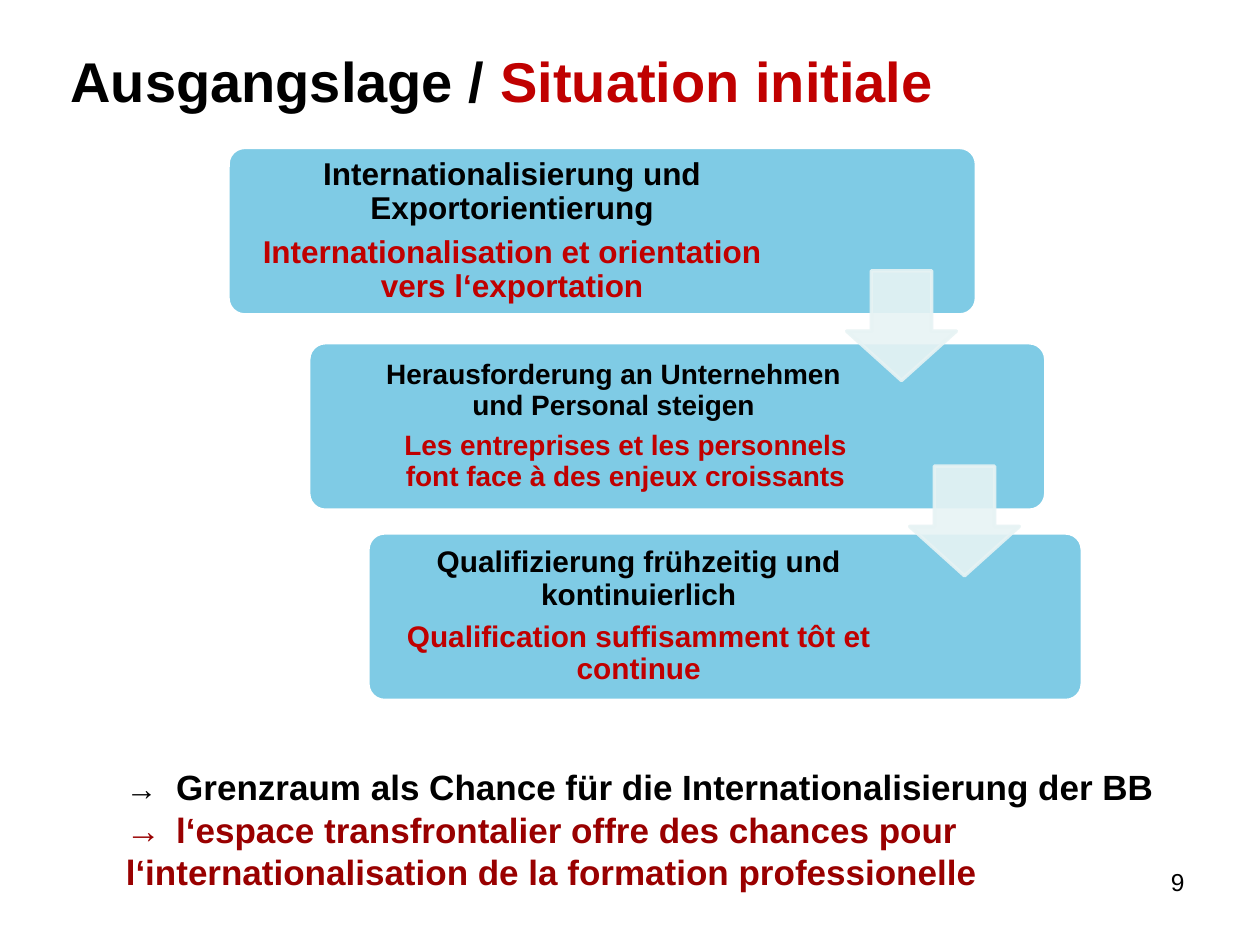
"""Build the slide on the initial situation, with three cascading steps."""
from lxml import etree
from pptx import Presentation
from pptx.dml.color import RGBColor
from pptx.enum import shapes, text
from pptx.oxml import ns
from pptx.util import Inches, Pt

COLORS = {"german": "000000", "french": "C00000", "conclusion": "990000",
          "box": "0099CC", "box_line": "FFFFFF", "arrow": "E7F3F4"}
BOX_H, TEXT_GAP, ARROW = 1.33, 0.04, 0.87
STEPS = [
    (1.81, 1.17, 5.94, 4.43, 18, (0, 0),
     "Internationalisierung und Exportorientierung",
     "Internationalisation et orientation vers l‘exportation"),
    (2.45, 2.72, 5.85, 4.36, 16, (0.4, 0.59),
     "Herausforderung an Unternehmen und Personal steigen",
     "Les entreprises et les personnels font face à des enjeux croissants"),
    (2.92, 4.23, 5.67, 4.22, 17, (0, 0),
     "Qualifizierung frühzeitig und kontinuierlich",
     "Qualification suffisamment tôt et continue"),
]
ARROWS = [(6.72, 2.15), (7.22, 3.7)]
CONCLUSIONS = [
    ("Grenzraum als Chance für die Internationalisierung der BB", "german", 18),
    ("l‘espace transfrontalier offre des chances pour "
     "l‘internationalisation de la formation professionelle", "conclusion", 20),
]


def rgb(name):
    return RGBColor.from_string(COLORS[name])


def add_run(p, content, size, color, bold=True):
    r = p.add_run()
    r.text = content
    r.font.name = "Arial"
    r.font.size = Pt(size)
    r.font.bold = bold
    r.font.color.rgb = rgb(color)


def add_text_box(s, x, y, w, h):
    tf = s.shapes.add_textbox(Inches(x), Inches(y), Inches(w), Inches(h)).text_frame
    tf.word_wrap = True
    return tf


def set_alpha(parent, percent):
    for clr in parent.iter(ns.qn("a:srgbClr")):
        etree.SubElement(clr, ns.qn("a:alpha"), val=str(percent * 1000))


def add_block(s, kind, bounds, adjustments, fill, line):
    sp = s.shapes.add_shape(kind, *(Inches(v) for v in bounds))
    sp.shadow.inherit = False
    for i, value in enumerate(adjustments):
        sp.adjustments[i] = value
    sp.fill.solid()
    sp.fill.fore_color.rgb = rgb(fill)
    sp.line.color.rgb = rgb(line)
    sp.line.width = Pt(2)
    return sp


def add_step(s, x, y, w, text_w, size, indents, german, french):
    sp = add_block(s, shapes.MSO_SHAPE.ROUNDED_RECTANGLE, (x, y, w, BOX_H),
                   [0.1], "box", "box_line")
    set_alpha(sp.fill._xPr.find(ns.qn("a:solidFill")), 50)
    tf = add_text_box(s, x + TEXT_GAP, y + TEXT_GAP, text_w, BOX_H - 2 * TEXT_GAP)
    tf.vertical_anchor = text.MSO_ANCHOR.MIDDLE
    tf.margin_left = tf.margin_right = tf.margin_top = tf.margin_bottom = Inches(0.07)
    languages = [(german, "german"), (french, "french")]
    for i, ((content, color), indent) in enumerate(zip(languages, indents)):
        p = tf.add_paragraph() if i else tf.paragraphs[0]
        p.alignment = text.PP_ALIGN.CENTER
        p.line_spacing = 0.9
        p.space_after = Pt(round(size * 0.35))
        if indent:
            p._p.get_or_add_pPr().set("marL", str(Inches(indent)))
        add_run(p, content, size, color)


def add_arrow(s, x, y):
    sp = add_block(s, shapes.MSO_SHAPE.DOWN_ARROW, (x, y, ARROW, ARROW),
                   [0.55, 0.45], "arrow", "arrow")
    set_alpha(sp._element.spPr, 90)


def add_title(s):
    sp = s.shapes.title
    sp.left, sp.top, sp.width, sp.height = (Inches(v) for v in (0.46, 0.21, 8.99, 0.85))
    tf = sp.text_frame
    tf.vertical_anchor = text.MSO_ANCHOR.MIDDLE
    p = tf.paragraphs[0]
    p.alignment = text.PP_ALIGN.LEFT
    add_run(p, "Ausgangslage / ", 32, "german")
    add_run(p, "Situation initiale", 32, "french")


def add_conclusions(s):
    tf = add_text_box(s, 0.9, 6.03, 8.82, 1.11)
    for i, (content, color, arrow_size) in enumerate(CONCLUSIONS):
        p = tf.add_paragraph() if i else tf.paragraphs[0]
        tabs = etree.SubElement(p._p.get_or_add_pPr(), ns.qn("a:tabLst"))
        etree.SubElement(tabs, ns.qn("a:tab"), pos=str(Inches(0.4)), algn="l")
        add_run(p, "→\t", arrow_size, color)
        add_run(p, content, 20, color)


def add_page_number(s):
    p = add_text_box(s, 7.17, 6.83, 2.33, 0.52).paragraphs[0]
    p.alignment = text.PP_ALIGN.RIGHT
    add_run(p, "9", 14, "german", bold=False)


def main():
    prs = Presentation()
    prs.slide_width, prs.slide_height = Inches(10), Inches(7.5)
    s = prs.slides.add_slide(prs.slide_layouts[5])
    add_title(s)
    add_page_number(s)
    for step in STEPS:
        add_step(s, *step)
    for x, y in ARROWS:
        add_arrow(s, x, y)
    add_conclusions(s)
    prs.save("out.pptx")


if __name__ == "__main__":
    main()
